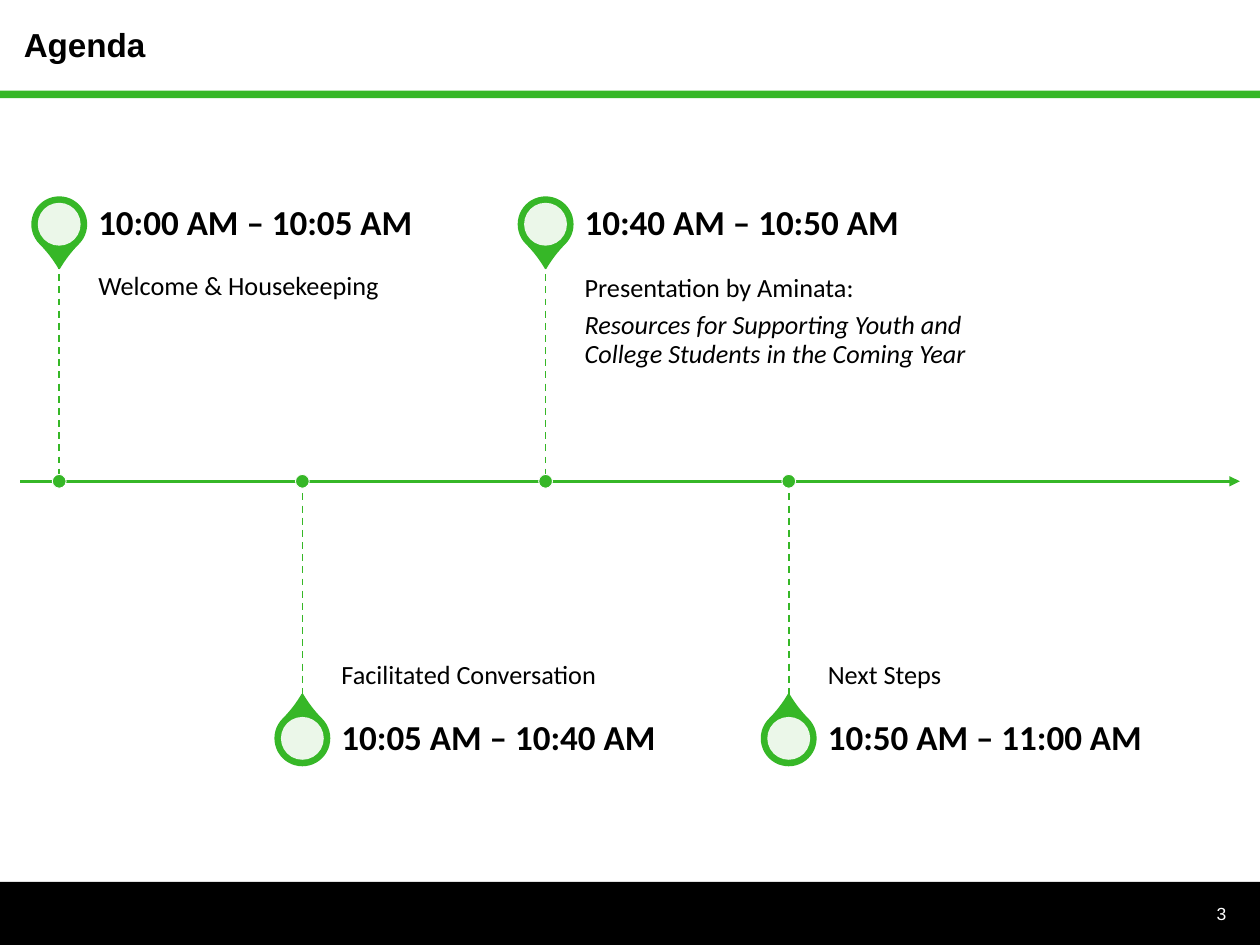
from dataclasses import dataclass

from lxml import etree
from pptx import Presentation
from pptx.dml.color import RGBColor
from pptx.enum.dml import MSO_LINE
from pptx.enum.shapes import MSO_CONNECTOR, MSO_SHAPE
from pptx.enum.text import MSO_ANCHOR, PP_ALIGN
from pptx.oxml.ns import qn
from pptx.util import Inches, Pt

RECTANGLE, OVAL, TEAR = MSO_SHAPE.RECTANGLE, MSO_SHAPE.OVAL, MSO_SHAPE.TEAR
STRAIGHT, DASH = MSO_CONNECTOR.STRAIGHT, MSO_LINE.DASH
TOP, MIDDLE, BOTTOM = MSO_ANCHOR.TOP, MSO_ANCHOR.MIDDLE, MSO_ANCHOR.BOTTOM
LEFT, RIGHT = PP_ALIGN.LEFT, PP_ALIGN.RIGHT


@dataclass(frozen=True)
class Theme:
    green: RGBColor = RGBColor(0x36, 0xB7, 0x27)
    black: RGBColor = RGBColor(0, 0, 0)
    white: RGBColor = RGBColor(0xFF, 0xFF, 0xFF)
    heading_font: str = "Arial"
    body_font: str = "Calibri"
    title_size: float = 19
    time_size: float = 20
    topic_size: float = 15
    number_size: float = 10


@dataclass(frozen=True)
class Session:
    time: str
    topic: str
    subtitle: str = ""


THEME = Theme()
SESSIONS = [
    Session("10:00 AM – 10:05 AM", "Welcome & Housekeeping"),
    Session("10:05 AM – 10:40 AM", "Facilitated Conversation"),
    Session("10:40 AM – 10:50 AM", "Presentation by Aminata:",
            "Resources for Supporting Youth and College Students in the Coming Year"),
    Session("10:50 AM – 11:00 AM", "Next Steps"),
]

AXIS_Y = 3.82
FIRST_X, STEP_X = 0.47, 1.93
STEM = 1.74
TIME_HEIGHT = 0.61
PIN_OFFSET = 2.04  # from the axis to the centre of a pin
PIN_SIZE, HOLE_SIZE, DOT_SIZE = 0.43, 0.34, 0.11
TEXT_GAP, TEXT_WIDTH = 0.31, 3.22


def add_filled(slide, kind, left: float, top: float, width: float, height: float,
               fill: RGBColor, line: RGBColor | None = None, line_width: float = 1):
    shape = slide.shapes.add_shape(kind, Inches(left), Inches(top),
                                   Inches(width), Inches(height))
    shape.shadow.inherit = False
    shape.fill.solid()
    shape.fill.fore_color.rgb = fill
    if line is None:
        shape.line.fill.background()
    else:
        shape.line.color.rgb = line
        shape.line.width = Pt(line_width)
    return shape


def add_centred(slide, kind, x: float, y: float, size: float, fill: RGBColor, **outline):
    return add_filled(slide, kind, x - size / 2, y - size / 2, size, size, fill, **outline)


def add_line(slide, start: tuple[float, float], end: tuple[float, float], width: float):
    line = slide.shapes.add_connector(STRAIGHT, *map(Inches, start + end))
    line.line.color.rgb = THEME.green
    line.line.width = Pt(width)
    etree.SubElement(line._element.spPr, qn("a:effectLst"))
    return line


def add_text(slide, text: str, left: float, top: float, width: float, height: float, *,
             size: float, font: str = THEME.body_font, color: RGBColor = THEME.black,
             bold: bool = False, italic_from: int | None = None, align=LEFT, anchor=MIDDLE,
             insets: tuple[float, float, float, float] = (0.1, 0.05, 0.1, 0.05),
             space_after: float = 0, line_spacing: float = 0.9) -> None:
    """Write one paragraph per text line; those from italic_from on are italic."""
    box = slide.shapes.add_textbox(Inches(left), Inches(top), Inches(width), Inches(height))
    frame = box.text_frame
    frame.word_wrap = True
    frame.vertical_anchor = anchor
    (frame.margin_left, frame.margin_top,
     frame.margin_right, frame.margin_bottom) = map(Inches, insets)
    for index, content in enumerate(text.split("\n")):
        para = frame.paragraphs[0] if index == 0 else frame.add_paragraph()
        para.alignment = align
        para.line_spacing = line_spacing
        para.space_after = Pt(space_after)
        span = para.add_run()
        span.text = content
        span.font.name = font
        span.font.size = Pt(size)
        span.font.bold = bold
        span.font.italic = italic_from is not None and index >= italic_from
        span.font.color.rgb = color


def add_axis(slide) -> None:
    axis = add_line(slide, (0.16, AXIS_Y), (9.84, AXIS_Y), 1.5)
    etree.SubElement(axis.line._get_or_add_ln(), qn("a:tailEnd"), type="triangle")


def add_pin(slide, x: float, y: float, points_down: bool) -> None:
    pin = add_centred(slide, TEAR, x, y, PIN_SIZE, THEME.green, line=THEME.green)
    pin.adjustments[0] = 1.15
    pin.rotation = 135 if points_down else 315
    hole = add_centred(slide, OVAL, x, y, HOLE_SIZE, THEME.white)
    color = hole._element.spPr.find(qn("a:solidFill"))[0]
    etree.SubElement(color, qn("a:alpha"), val="90000")


def add_session(slide, session: Session, x: float, above: bool) -> None:
    """Draw a session's pin, texts, stem and axis dot above or below the axis."""
    side = -1 if above else 1
    stem_end = AXIS_Y + side * STEM
    text_left = x + TEXT_GAP
    add_pin(slide, x, AXIS_Y + side * PIN_OFFSET, above)

    topic = "\n".join(filter(None, (session.topic, session.subtitle)))
    add_text(slide, topic, text_left, min(AXIS_Y, stem_end), TEXT_WIDTH, STEM,
             size=THEME.topic_size, italic_from=1, anchor=TOP if above else BOTTOM,
             insets=(0, 0.1, 0.1, 0.16) if above else (0, 0.16, 0, 0.1),
             space_after=5.25)
    time_top = stem_end - TIME_HEIGHT if above else stem_end
    add_text(slide, session.time, text_left, time_top, TEXT_WIDTH, TIME_HEIGHT,
             size=THEME.time_size, bold=True, insets=(0, 0, 0.14, 0), space_after=7)

    stem = add_line(slide, (x, min(AXIS_Y, stem_end)), (x, max(AXIS_Y, stem_end)), 1)
    stem.line.dash_style = DASH
    add_centred(slide, OVAL, x, AXIS_Y, DOT_SIZE, THEME.green,
                line=THEME.white, line_width=0.5)


def main() -> None:
    deck = Presentation()
    deck.slide_width, deck.slide_height = Inches(10), Inches(7.5)
    slide = deck.slides.add_slide(deck.slide_layouts[6])

    add_filled(slide, RECTANGLE, 0, 7, 10, 0.5, THEME.black)
    add_filled(slide, RECTANGLE, 0, 0.72, 10, 0.06, THEME.green)
    add_text(slide, "Agenda", 0.09, 0.13, 9.75, 0.48, size=THEME.title_size,
             font=THEME.heading_font, bold=True)
    add_text(slide, "3", 9.41, 7.05, 0.42, 0.4, size=THEME.number_size,
             font=THEME.heading_font, color=THEME.white, align=RIGHT,
             space_after=6, line_spacing=1.0)

    add_axis(slide)
    for index, session in enumerate(SESSIONS):
        add_session(slide, session, FIRST_X + index * STEP_X, above=index % 2 == 0)
    deck.save("out.pptx")


if __name__ == "__main__":
    main()
